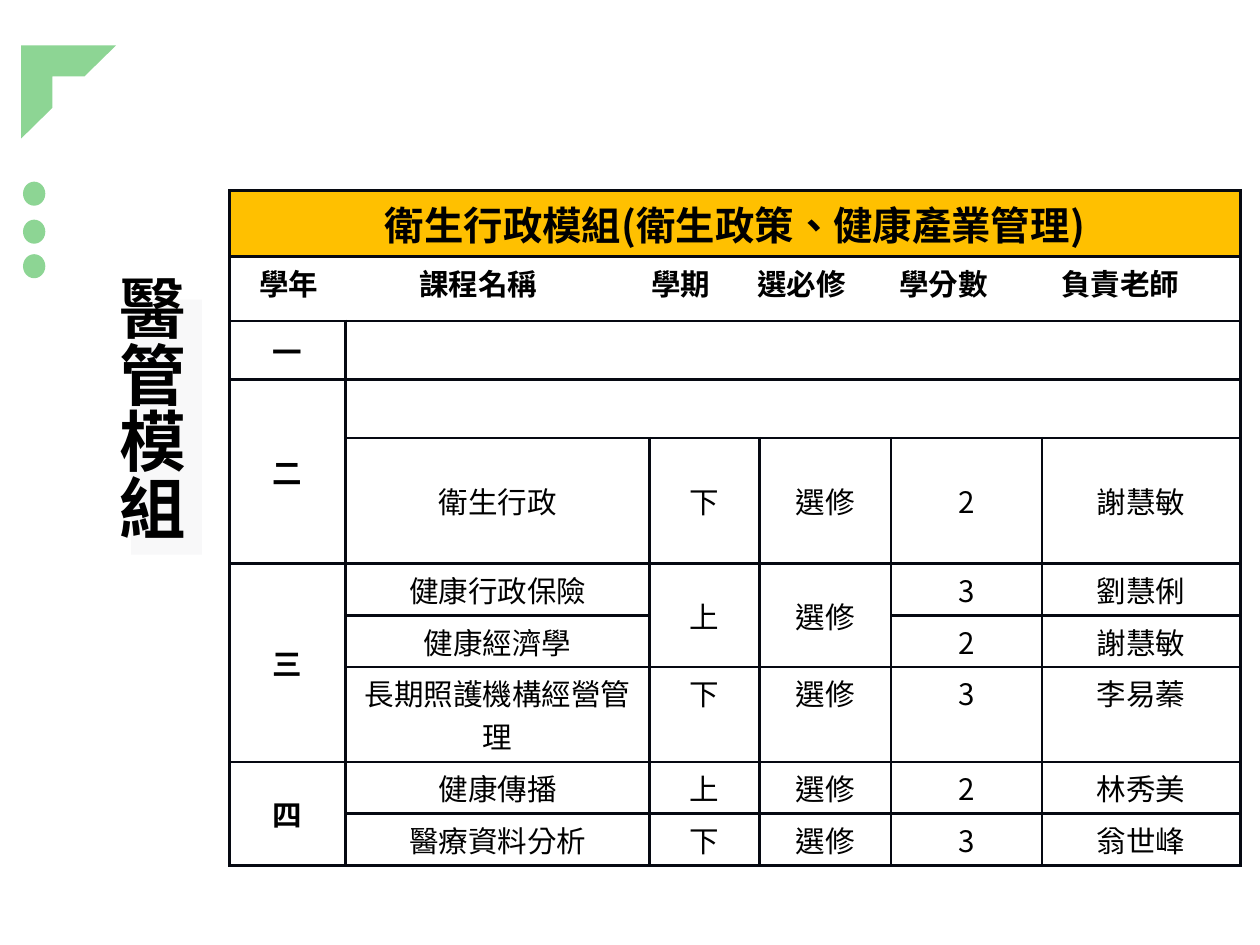
from dataclasses import dataclass

from lxml import etree
from pptx import Presentation
from pptx.dml.color import RGBColor
from pptx.enum.shapes import MSO_SHAPE
from pptx.enum.text import MSO_ANCHOR, MSO_AUTO_SIZE, PP_ALIGN
from pptx.oxml.ns import qn
from pptx.slide import Slide
from pptx.table import Table
from pptx.text.text import _Paragraph
from pptx.util import Cm, Pt

FRAME, DOT, RECT = MSO_SHAPE.HALF_FRAME, MSO_SHAPE.OVAL, MSO_SHAPE.RECTANGLE
TOP, MIDDLE = MSO_ANCHOR.TOP, MSO_ANCHOR.MIDDLE
LEFT, CENTER = PP_ALIGN.LEFT, PP_ALIGN.CENTER
FIXED = MSO_AUTO_SIZE.NONE
FONT = "Noto Sans CJK SC"
COLORS = {
    "green": "8DD594",
    "pale": "F8F8F9",
    "gold": "FFC000",
    "text": "000000",
    "line": "060912",
}


@dataclass
class Mark:
    kind: MSO_SHAPE
    left: float
    top: float
    width: float
    height: float
    color: str = "green"


@dataclass
class Entry:
    row: int
    col: int
    text: str = ""
    down: int = 1
    across: int = 1
    size: int = 24
    bold: bool = False
    anchor: MSO_ANCHOR = TOP
    fill: str = ""


MARKS = [
    Mark(FRAME, 0.61, 1.3, 2.72, 2.67),
    *[Mark(DOT, 0.66, top, 0.64, 0.69) for top in (5.21, 6.3, 7.29)],
    Mark(RECT, 3.76, 8.59, 2.03, 7.32, "pale"),
]
WIDTHS = [3.33, 8.71, 3.15, 3.78, 4.32, 5.69]
HEIGHTS = [1.89, 1.85, 1.68, 1.68, 3.6, 1.48, 1.48, 2.72, 1.48, 1.48]
HEADS = ["學年", "課程名稱", "學期", "選必修", "學分數", "負責老師"]
TABS = [4.59, 11.24, 14.28, 18.35, 22.99]
INDENT = 0.85
YEARS = [("一", 2, 1), ("二", 3, 2), ("三", 5, 3), ("四", 8, 2)]
COURSES = {
    4: ["衛生行政", "下", "選修", "2", "謝慧敏"],
    5: ["健康行政保險", "上", "選修", "3", "劉慧俐"],
    6: ["健康經濟學", "", "", "2", "謝慧敏"],
    7: ["長期照護機構經營管理", "下", "選修", "3", "李易蓁"],
    8: ["健康傳播", "上", "選修", "2", "林秀美"],
    9: ["醫療資料分析", "下", "選修", "3", "翁世峰"],
}
SHARED = [(5, 2), (5, 3)]  # cells that also cover the row below


def rgb(name: str) -> RGBColor:
    return RGBColor.from_string(COLORS[name])


def add_run(para: _Paragraph, text: str, size: int, bold: bool) -> None:
    run = para.add_run()
    run.text = text
    run.font.size = Pt(size)
    run.font.bold = bold
    run.font.color.rgb = rgb("text")
    run.font.name = FONT
    props = run._r.get_or_add_rPr()
    props.set("lang", "zh-TW")
    etree.SubElement(props, qn("a:ea"), typeface=FONT)


def draw_mark(slide: Slide, mark: Mark) -> None:
    shape = slide.shapes.add_shape(
        mark.kind, Cm(mark.left), Cm(mark.top), Cm(mark.width), Cm(mark.height)
    )
    shape.shadow.inherit = False
    shape.fill.solid()
    shape.fill.fore_color.rgb = rgb(mark.color)
    shape.line.fill.background()


def draw_title(slide: Slide) -> None:
    title = slide.shapes.title
    title.left, title.top = Cm(2.67), Cm(7.65)
    title.width, title.height = Cm(3.27), Cm(10.54)
    frame = title.text_frame
    frame.auto_size = FIXED
    frame.word_wrap = True
    frame.vertical_anchor = MIDDLE
    frame.margin_left = frame.margin_right = Cm(0.25)
    frame.margin_top = frame.margin_bottom = Cm(0.25)
    frame._txBody.bodyPr.set("vert", "eaVert")
    para = frame.paragraphs[0]
    para.alignment = LEFT
    add_run(para, "醫管模組", 54, True)


def add_lines(table: Table) -> None:
    for cell in table.iter_cells():
        props = cell._tc.get_or_add_tcPr()
        for side in ("lnL", "lnR", "lnT", "lnB"):
            line = etree.SubElement(props, qn(f"a:{side}"), w=str(Pt(2.25)))
            fill = etree.SubElement(line, qn("a:solidFill"))
            etree.SubElement(fill, qn("a:srgbClr"), val=COLORS["line"])
        cell.fill.background()


def fill_cell(table: Table, entry: Entry) -> None:
    cell = table.cell(entry.row, entry.col)
    if entry.down > 1 or entry.across > 1:
        last = table.cell(entry.row + entry.down - 1, entry.col + entry.across - 1)
        cell.merge(last)
    cell.vertical_anchor = entry.anchor
    if entry.fill:
        cell.fill.solid()
        cell.fill.fore_color.rgb = rgb(entry.fill)
    if entry.text:
        para = cell.text_frame.paragraphs[0]
        para.alignment = CENTER
        add_run(para, entry.text, entry.size, entry.bold)


def fill_heads(table: Table) -> None:
    """Set the column heads on tab stops in one merged row."""
    cell = table.cell(1, 0)
    cell.merge(table.cell(1, len(WIDTHS) - 1))
    cell.margin_left = Cm(INDENT)
    para = cell.text_frame.paragraphs[0]
    para.alignment = LEFT
    stops = etree.SubElement(para._p.get_or_add_pPr(), qn("a:tabLst"))
    for tab in TABS:
        etree.SubElement(stops, qn("a:tab"), pos=str(Cm(tab)), algn="l")
    add_run(para, "\t".join(HEADS), 24, True)


def list_cells() -> list[Entry]:
    cells = [
        Entry(0, 0, "衛生行政模組(衛生政策、健康產業管理)", across=6, size=32,
              bold=True, fill="gold"),
        Entry(2, 1, across=5),
        Entry(3, 1, across=5),
    ]
    for text, row, down in YEARS:
        cells.append(Entry(row, 0, text, down, bold=True, anchor=MIDDLE))
    for row, texts in COURSES.items():
        for col, text in enumerate(texts, 1):
            if text:
                down = 2 if (row, col) in SHARED else 1
                anchor = MIDDLE if row == 4 or down == 2 else TOP
                cells.append(Entry(row, col, text, down, anchor=anchor))
    return cells


def draw_table(slide: Slide) -> None:
    table = slide.shapes.add_table(
        len(HEIGHTS), len(WIDTHS), Cm(6.58), Cm(5.46),
        Cm(sum(WIDTHS)), Cm(sum(HEIGHTS)),
    ).table
    table.first_row = table.horz_banding = False
    for col, width in zip(table.columns, WIDTHS):
        col.width = Cm(width)
    for row, height in zip(table.rows, HEIGHTS):
        row.height = Cm(height)
    add_lines(table)
    fill_heads(table)
    for entry in list_cells():
        fill_cell(table, entry)


def main() -> None:
    deck = Presentation()
    deck.slide_width, deck.slide_height = Cm(36.12), Cm(27.1)
    slide = deck.slides.add_slide(deck.slide_layouts[5])
    for mark in MARKS:
        draw_mark(slide, mark)
    tree = slide.shapes._spTree
    tree.append(slide.shapes.title._element)  # title above the pale panel
    draw_title(slide)
    draw_table(slide)
    deck.save("out.pptx")


if __name__ == "__main__":
    main()
